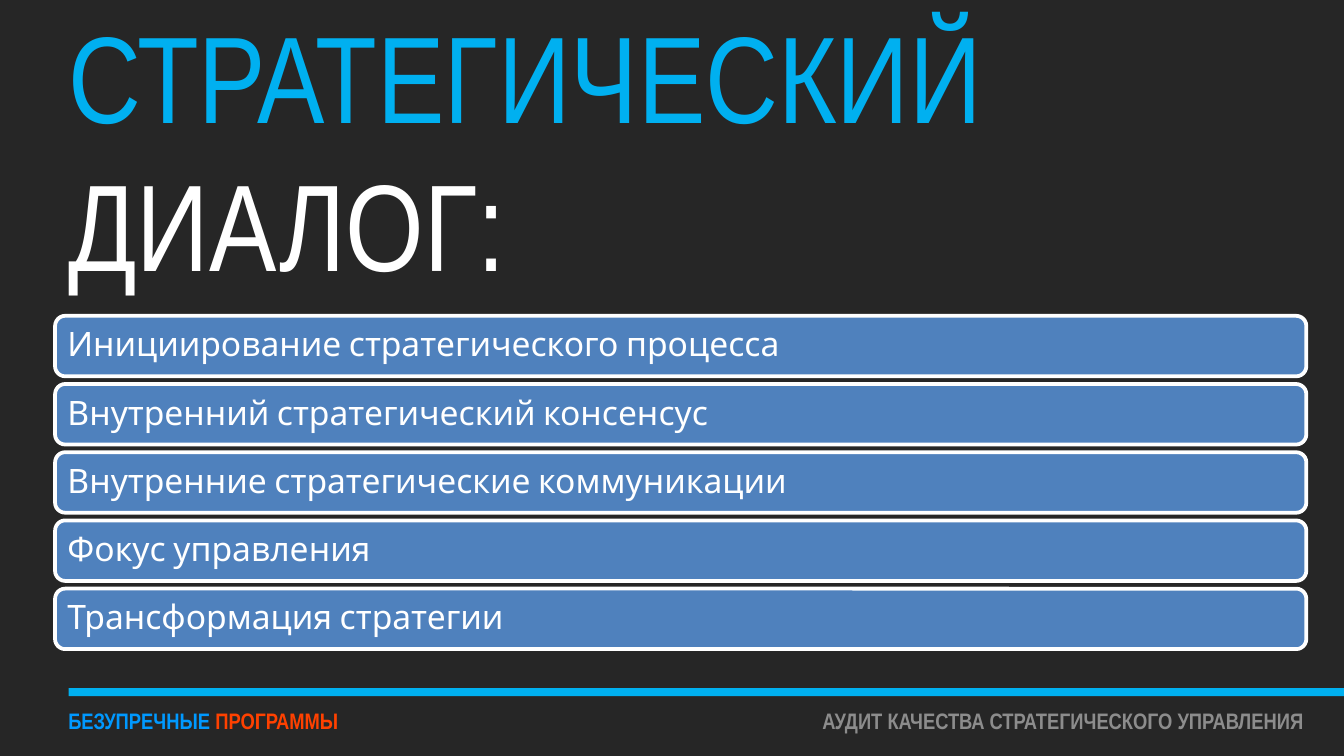
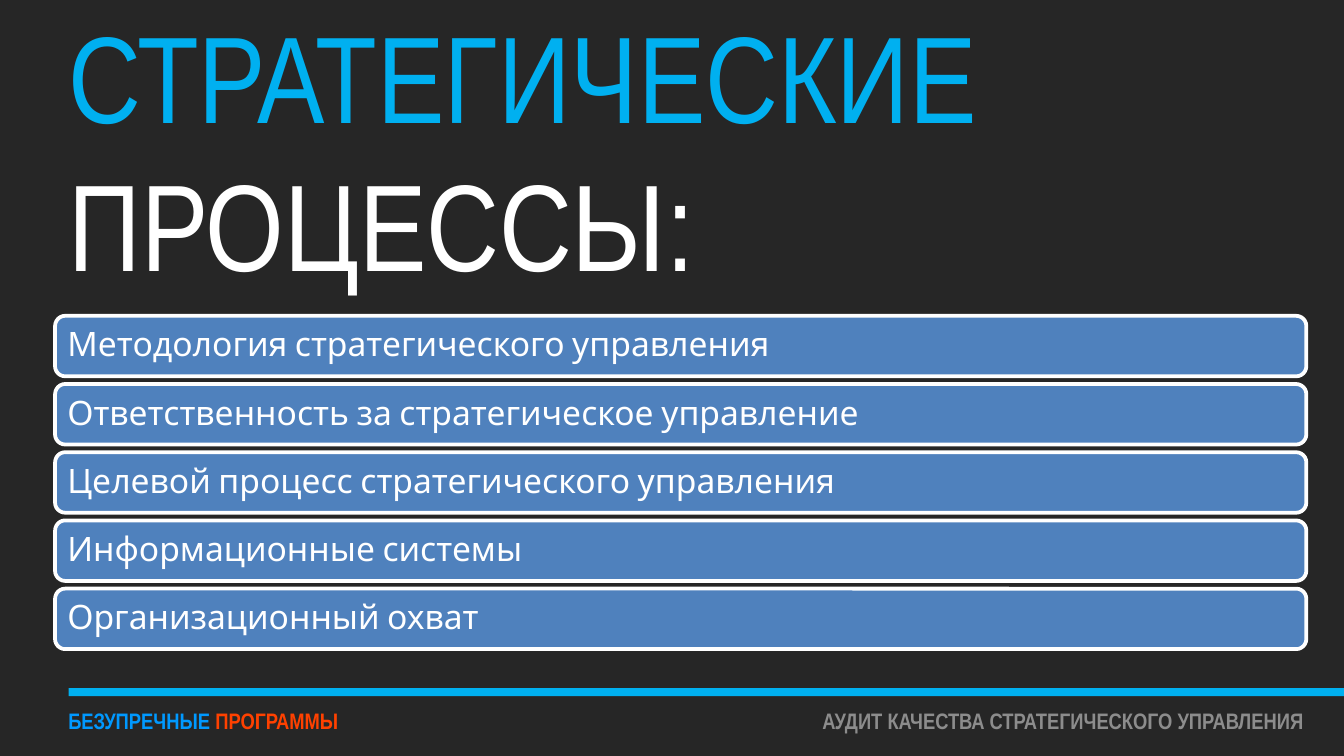
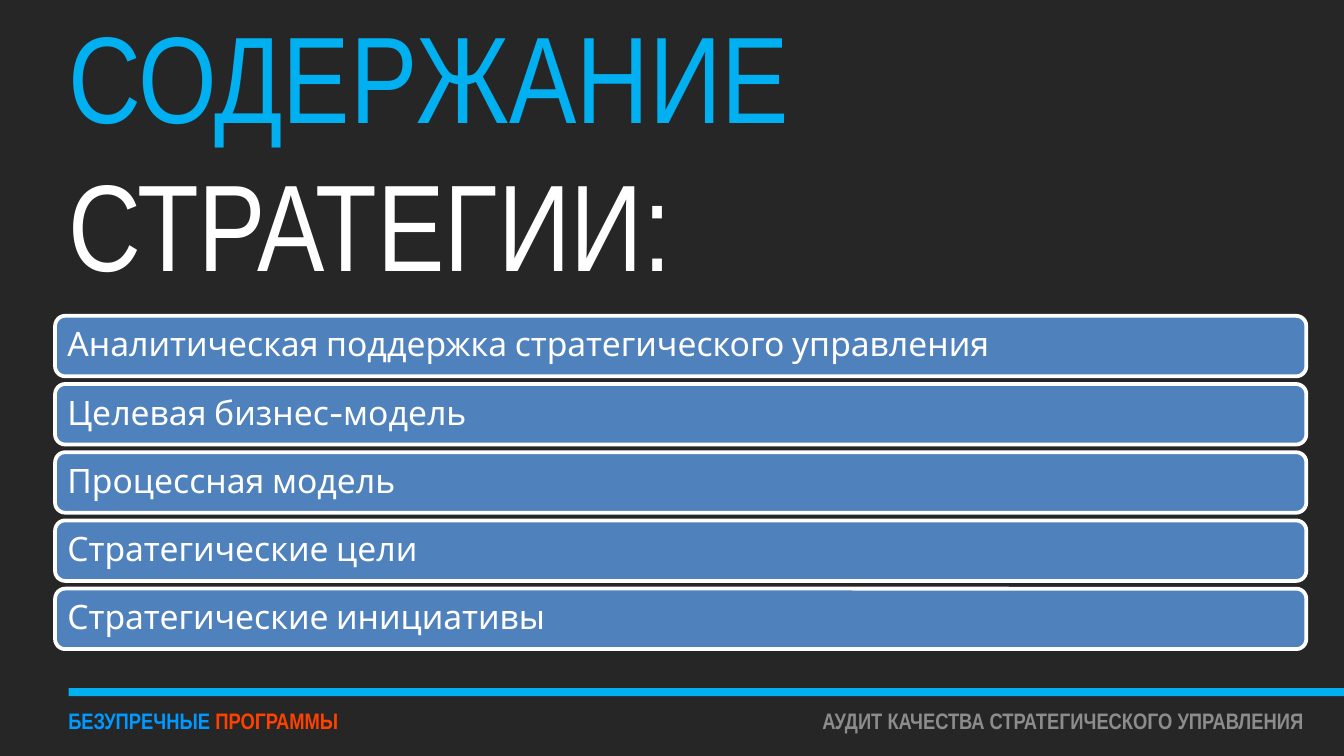
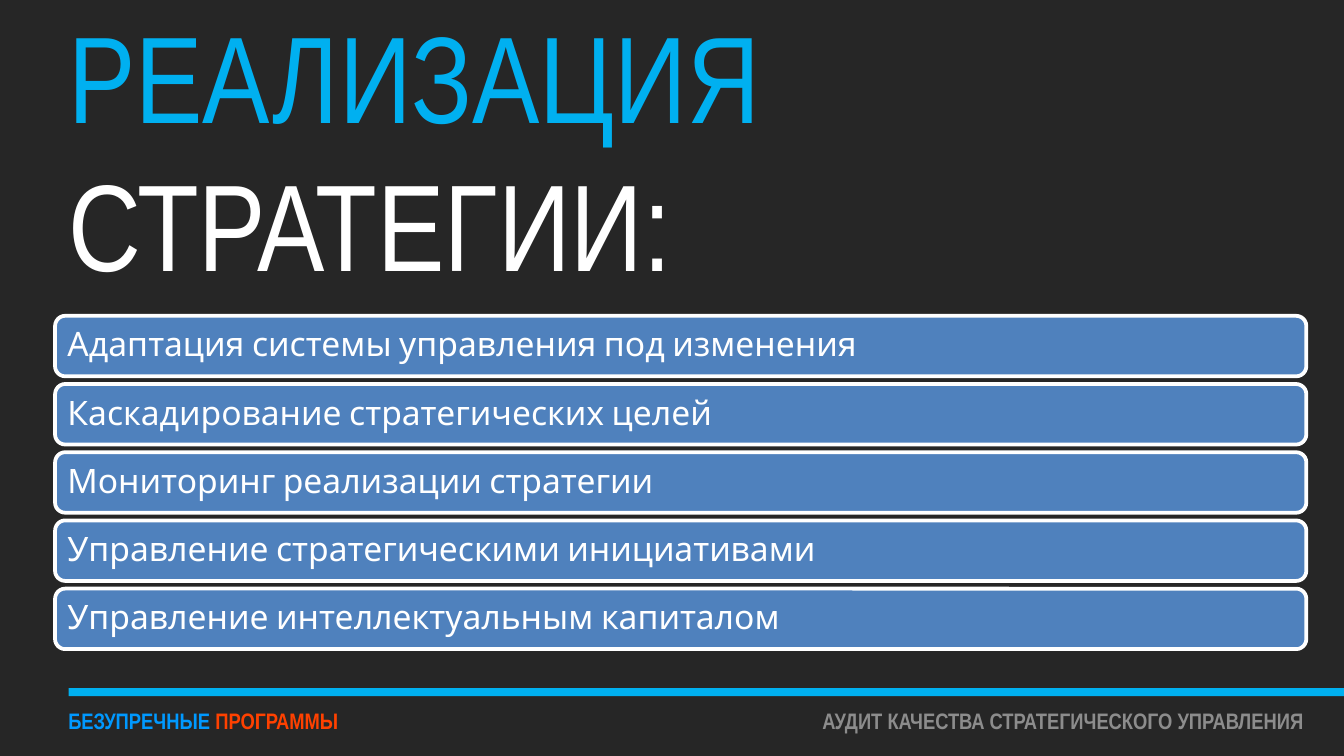
from pptx import Presentation
from pptx.dml.color import RGBColor
from pptx.enum.shapes import MSO_SHAPE
from pptx.enum.text import MSO_ANCHOR, PP_ALIGN
from pptx.util import Inches, Pt

DARK = RGBColor(0x26, 0x26, 0x26)
SKY = RGBColor(0x00, 0xB0, 0xF0)
WHITE = RGBColor(0xFF, 0xFF, 0xFF)
STEEL = RGBColor(0x4F, 0x81, 0xBD)
GREY = RGBColor(0x8C, 0x8C, 0x8C)
AZURE = RGBColor(0x00, 0x99, 0xFF)
ORANGE = RGBColor(0xFF, 0x41, 0x00)

WIDE = 10
HIGH = WIDE * 9 / 16
LEFT = 0.41
BAR_WIDE, BAR_HIGH = 9.31, 0.45
FIRST_TOP, LAST_TOP = 2.355, 4.38
FIRST_TOP, LAST_TOP = 2.35, 4.38
FOOT_TOP, FOOT_HIGH = 5.21, 0.3

TITLE = {"name": "Arial Narrow", "size": Pt(66)}
ITEM = {"name": "Cabin", "size": Pt(18)}
FOOT = {"name": "Arial Narrow", "size": Pt(12), "bold": True}

TOPICS = [
    ("СТРАТЕГИЧЕСКИЙ", "ДИАЛОГ:", [
        "Инициирование стратегического процесса",
        "Внутренний стратегический консенсус",
        "Внутренние стратегические коммуникации",
        "Фокус управления",
        "Трансформация стратегии",
    ]),
    ("СТРАТЕГИЧЕСКИЕ", "ПРОЦЕССЫ:", [
        "Методология стратегического управления",
        "Ответственность за стратегическое управление",
        "Целевой процесс стратегического управления",
        "Информационные системы",
        "Организационный охват",
    ]),
    ("СОДЕРЖАНИЕ", "СТРАТЕГИИ:", [
        "Аналитическая поддержка стратегического управления",
        "Целевая бизнес-модель",
        "Процессная модель",
        "Стратегические цели",
        "Стратегические инициативы",
    ]),
    ("РЕАЛИЗАЦИЯ", "СТРАТЕГИИ:", [
        "Адаптация системы управления под изменения",
        "Каскадирование стратегических целей",
        "Мониторинг реализации стратегии",
        "Управление стратегическими инициативами",
        "Управление интеллектуальным капиталом",
    ]),
]


def write(shape, runs, style, align=PP_ALIGN.LEFT, inset=(0.1, 0.05)):
    """Fill the shape with one paragraph of (text, colour) runs."""
    frame = shape.text_frame
    frame.word_wrap = True
    frame.vertical_anchor = MSO_ANCHOR.MIDDLE
    frame.margin_left = frame.margin_right = Inches(inset[0])
    frame.margin_top = frame.margin_bottom = Inches(inset[1])
    para = frame.paragraphs[0]
    para.alignment = align
    for text, color in runs:
        run = para.add_run()
        run.text = text
        run.font.color.rgb = color
        for key, value in style.items():
            setattr(run.font, key, value)
    return para


def add_text(slide, box, runs, style, align=PP_ALIGN.LEFT):
    write(slide.shapes.add_textbox(*map(Inches, box)), runs, style, align)


def add_block(slide, kind, box, fill, edge=None):
    block = slide.shapes.add_shape(kind, *map(Inches, box))
    block.shadow.inherit = False
    block.fill.solid()
    block.fill.fore_color.rgb = fill
    if edge is None:
        block.line.fill.background()
    else:
        block.line.color.rgb = edge
        block.line.width = Pt(2)
    return block


def add_bars(slide, items):
    pitch = (LAST_TOP - FIRST_TOP) / (len(items) - 1)
    for row, item in enumerate(items):
        bar = add_block(slide, MSO_SHAPE.ROUNDED_RECTANGLE,
                        (LEFT, FIRST_TOP + row * pitch, BAR_WIDE, BAR_HIGH),
                        STEEL, WHITE)
        para = write(bar, [(item, WHITE)], ITEM, inset=(0.07, 0.07))
        para.line_spacing = 0.9


def add_footer(slide):
    add_text(slide, (4.92, FOOT_TOP, 4.88, FOOT_HIGH),
             [("АУДИТ КАЧЕСТВА СТРАТЕГИЧЕСКОГО УПРАВЛЕНИЯ", GREY)],
             FOOT, PP_ALIGN.RIGHT)
    add_text(slide, (LEFT, FOOT_TOP, 2.36, FOOT_HIGH),
             [("БЕЗУПРЕЧНЫЕ ", AZURE), ("ПРОГРАММЫ", ORANGE)], FOOT)


def add_topic(deck, lead, rest, items):
    slide = deck.slides.add_slide(deck.slide_layouts[6])
    add_block(slide, MSO_SHAPE.RECTANGLE, (0.51, 5.12, WIDE - 0.51, 0.06), SKY)
    add_text(slide, (LEFT, 0.31, WIDE - LEFT, 1.59),
             [(lead + " ", SKY), (rest, WHITE)], TITLE)
    add_bars(slide, items)
    add_footer(slide)


def main():
    deck = Presentation()
    deck.slide_width, deck.slide_height = Inches(WIDE), Inches(HIGH)
    back = deck.slide_master.background.fill
    back.solid()
    back.fore_color.rgb = DARK
    for topic in TOPICS:
        add_topic(deck, *topic)
    deck.save("out.pptx")


if __name__ == "__main__":
    main()
